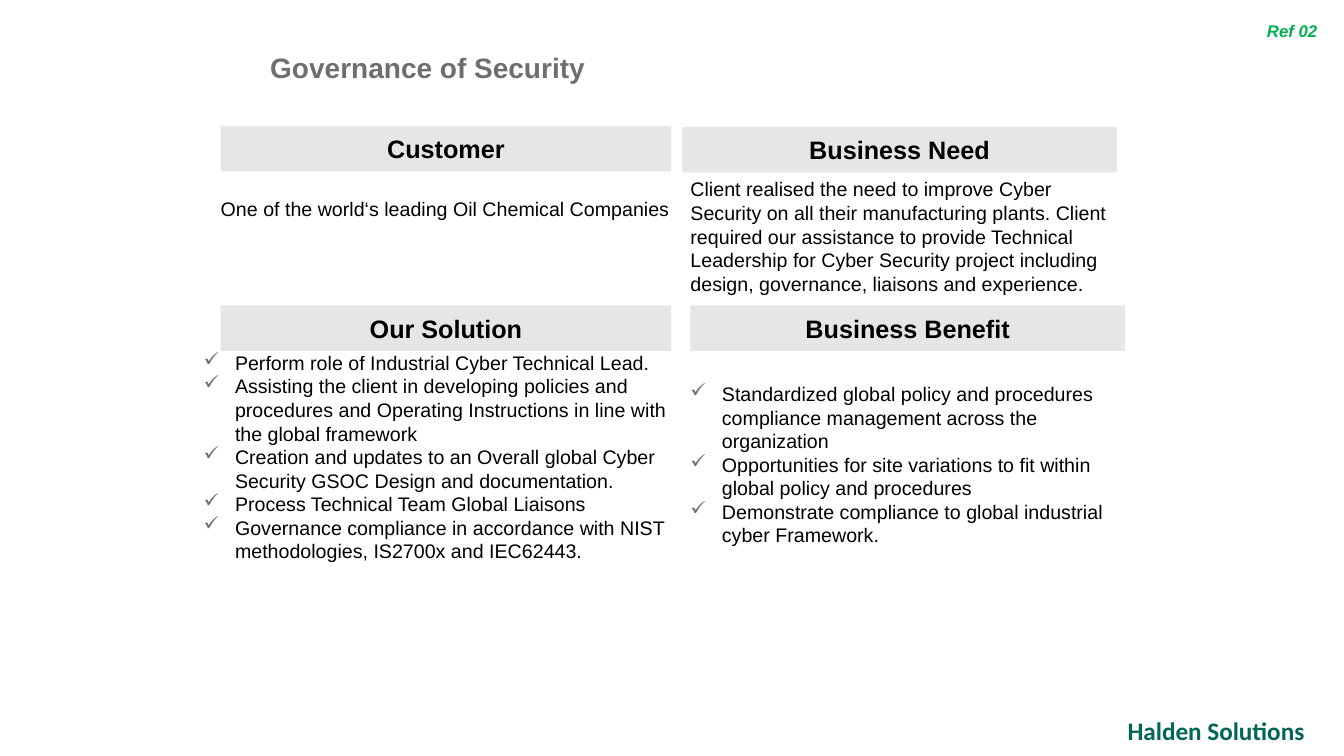
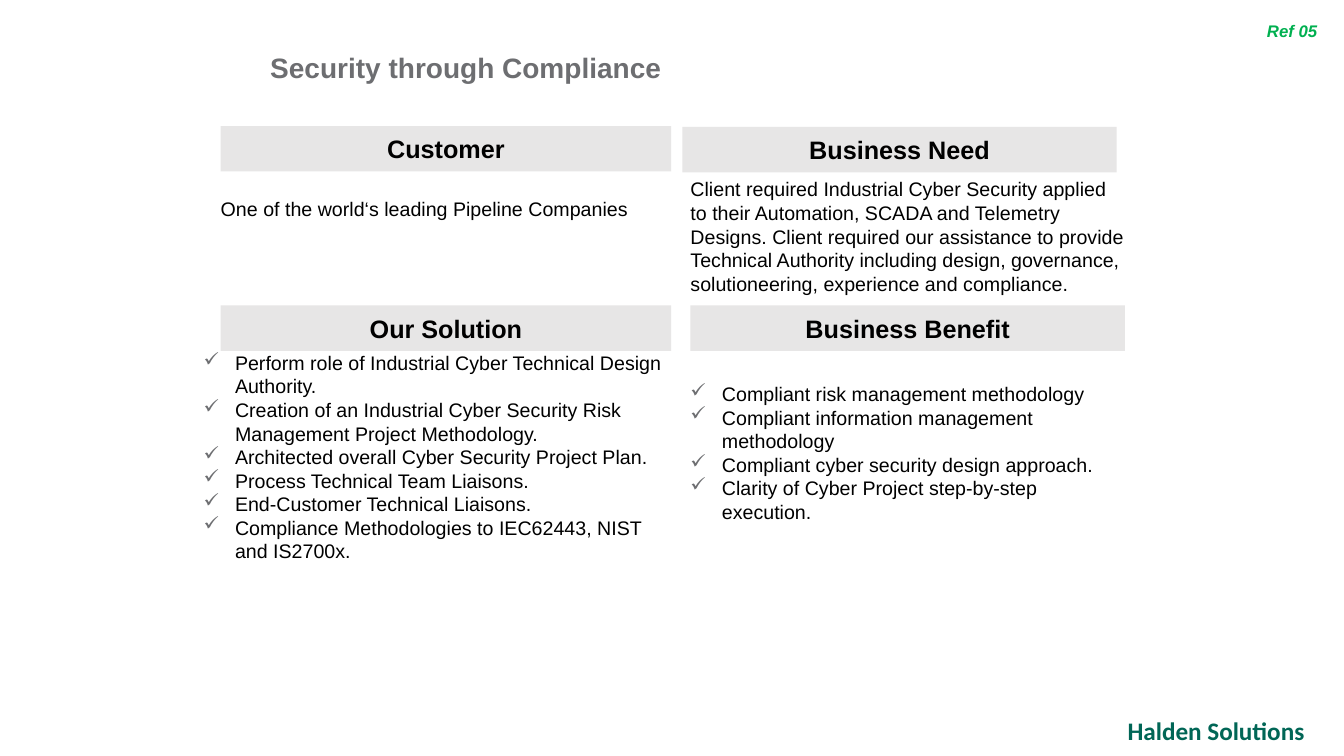
from dataclasses import dataclass
from typing import NamedTuple

from lxml.etree import SubElement
from pptx import Presentation
from pptx.dml.color import RGBColor as RGB
from pptx.enum.shapes import MSO_SHAPE as Shape
from pptx.enum.text import MSO_ANCHOR as Anchor, PP_ALIGN as Align
from pptx.oxml.ns import qn
from pptx.util import Pt


@dataclass(frozen=True)
class Theme:
    ink: RGB = RGB(0x00, 0x00, 0x00)
    grey: RGB = RGB(0x6D, 0x6E, 0x71)
    band: RGB = RGB(0xE7, 0xE6, 0xE6)
    reference: RGB = RGB(0x00, 0xB0, 0x50)
    footer: RGB = RGB(0x01, 0x66, 0x56)
    font: str = "Arial"
    footer_font: str = "Calibri"
    title_size: float = 20
    heading_size: float = 18
    body_size: float = 14
    reference_size: float = 12
    bullet: str = "✓"
    bullet_indent: float = 22.5


THEME = Theme()


class Box(NamedTuple):
    left: float
    top: float
    width: float
    height: float

    def points(self):
        return [Pt(length) for length in self]


class Panel(NamedTuple):
    """A heading band, and its body box relative to the band's top left corner."""
    heading: str
    band: Box
    body: Box
    bulleted: bool = False


LEFT, RIGHT = 157.7, 493.2
LEFT_WIDTH, RIGHT_WIDTH = 321.8, 310.3
UPPER, LOWER, BAND_HEIGHT = 90, 218.2, 32.4

PANELS = (
    Panel("Customer", Box(LEFT, UPPER, LEFT_WIDTH, BAND_HEIGHT),
          Box(0, 50.4, LEFT_WIDTH, 31.7)),
    Panel("Business Need", Box(RIGHT - 5.8, UPPER + 0.7, RIGHT_WIDTH, BAND_HEIGHT),
          Box(5.8, 36, RIGHT_WIDTH, 90)),
    Panel("Our Solution", Box(LEFT, LOWER, LEFT_WIDTH, BAND_HEIGHT),
          Box(-12.3, BAND_HEIGHT, 334.1, 170), bulleted=True),
    Panel("Business Benefit", Box(RIGHT, LOWER, RIGHT_WIDTH, BAND_HEIGHT),
          Box(0, 54.7, 304.6, 118.8), bulleted=True),
)

REFERENCES = (
    ("Ref 02", "Governance of Security", (
        ["One of the world‘s leading Oil Chemical Companies"],
        ["Client realised the need to improve Cyber Security on all their "
         "manufacturing plants. Client required our assistance to provide "
         "Technical Leadership for Cyber Security project including design, "
         "governance, liaisons and experience."],
        ["Perform role of Industrial Cyber Technical Lead.",
         "Assisting the client in developing policies and procedures and "
         "Operating Instructions in line with the global framework",
         "Creation and updates to an Overall global Cyber Security GSOC Design "
         "and documentation.",
         "Process Technical Team Global Liaisons",
         "Governance compliance in accordance with NIST methodologies, IS2700x "
         "and IEC62443."],
        ["Standardized global policy and procedures compliance management across "
         "the organization",
         "Opportunities for site variations to fit within global policy and "
         "procedures",
         "Demonstrate compliance to global industrial cyber Framework."],
    )),
    ("Ref 05", "Security through Compliance", (
        ["One of the world‘s leading Pipeline Companies"],
        ["Client required Industrial Cyber Security applied to their Automation, "
         "SCADA and Telemetry Designs. Client required our assistance to provide "
         "Technical Authority including design, governance, solutioneering, "
         "experience and compliance."],
        ["Perform role of Industrial Cyber Technical Design Authority.",
         "Creation of an Industrial Cyber Security Risk Management Project "
         "Methodology.",
         "Architected overall Cyber Security Project Plan.",
         "Process Technical Team Liaisons.",
         "End-Customer Technical Liaisons.",
         "Compliance Methodologies to IEC62443, NIST and IS2700x."],
        ["Compliant risk management methodology",
         "Compliant information management methodology",
         "Compliant cyber security design approach.",
         "Clarity of Cyber Project step-by-step execution."],
    )),
)


def add_bullet(paragraph):
    properties = paragraph._p.get_or_add_pPr()
    indent = Pt(THEME.bullet_indent)
    properties.set("marL", str(indent))
    properties.set("indent", str(-indent))
    colour = SubElement(properties, qn("a:buClr"))
    SubElement(colour, qn("a:srgbClr")).set("val", str(THEME.grey))
    SubElement(properties, qn("a:buChar")).set("char", THEME.bullet)


def write(frame, *lines, size=THEME.body_size, color=THEME.ink, font=THEME.font,
          bold=False, italic=False, align=Align.LEFT, anchor=Anchor.TOP,
          margin=0, bulleted=False):
    frame.word_wrap = True
    frame.vertical_anchor = anchor
    frame.margin_left = frame.margin_right = Pt(margin)
    frame.margin_top = frame.margin_bottom = Pt(margin / 2)
    for index, line in enumerate(lines):
        paragraph = frame.add_paragraph() if index else frame.paragraphs[0]
        paragraph.alignment = align
        if bulleted:
            add_bullet(paragraph)
        run = paragraph.add_run()
        run.text = line
        run.font.name = font
        run.font.size = Pt(size)
        run.font.bold = bold
        run.font.italic = italic
        run.font.color.rgb = color


def add_text(slide, box, *lines, **style):
    write(slide.shapes.add_textbox(*box.points()).text_frame, *lines, **style)


def add_panel(slide, panel, lines):
    band = slide.shapes.add_shape(Shape.RECTANGLE, *panel.band.points())
    band.shadow.inherit = False
    band.fill.solid()
    band.fill.fore_color.rgb = THEME.band
    band.line.fill.background()
    write(band.text_frame, panel.heading, size=THEME.heading_size, bold=True,
          align=Align.CENTER, anchor=Anchor.MIDDLE, margin=7.2)
    body = panel.body._replace(left=panel.band.left + panel.body.left,
                               top=panel.band.top + panel.body.top)
    add_text(slide, body, *lines, bulleted=panel.bulleted)


def add_frame(slide, title, reference):
    """Place the title, reference number and footer that every slide has."""
    add_text(slide, Box(723.6, 507.6, 215.3, 28.8), "Halden Solutions",
             size=THEME.heading_size, color=THEME.footer, font=THEME.footer_font,
             bold=True, align=Align.RIGHT, margin=7.2)
    add_text(slide, Box(193, 36, 725.8, 24.5), title,
             size=THEME.title_size, color=THEME.grey, bold=True)
    add_text(slide, Box(905, 15.1, 55, 14.4), reference,
             size=THEME.reference_size, color=THEME.reference, bold=True, italic=True)


def add_reference_slide(deck, reference, title, contents):
    slide = deck.slides.add_slide(deck.slide_layouts[6])
    add_frame(slide, title, reference)
    for panel, lines in zip(PANELS, contents):
        add_panel(slide, panel, lines)


def main():
    deck = Presentation()
    deck.slide_width, deck.slide_height = Pt(960), Pt(540)
    for reference in REFERENCES:
        add_reference_slide(deck, *reference)
    deck.save("out.pptx")


if __name__ == "__main__":
    main()
